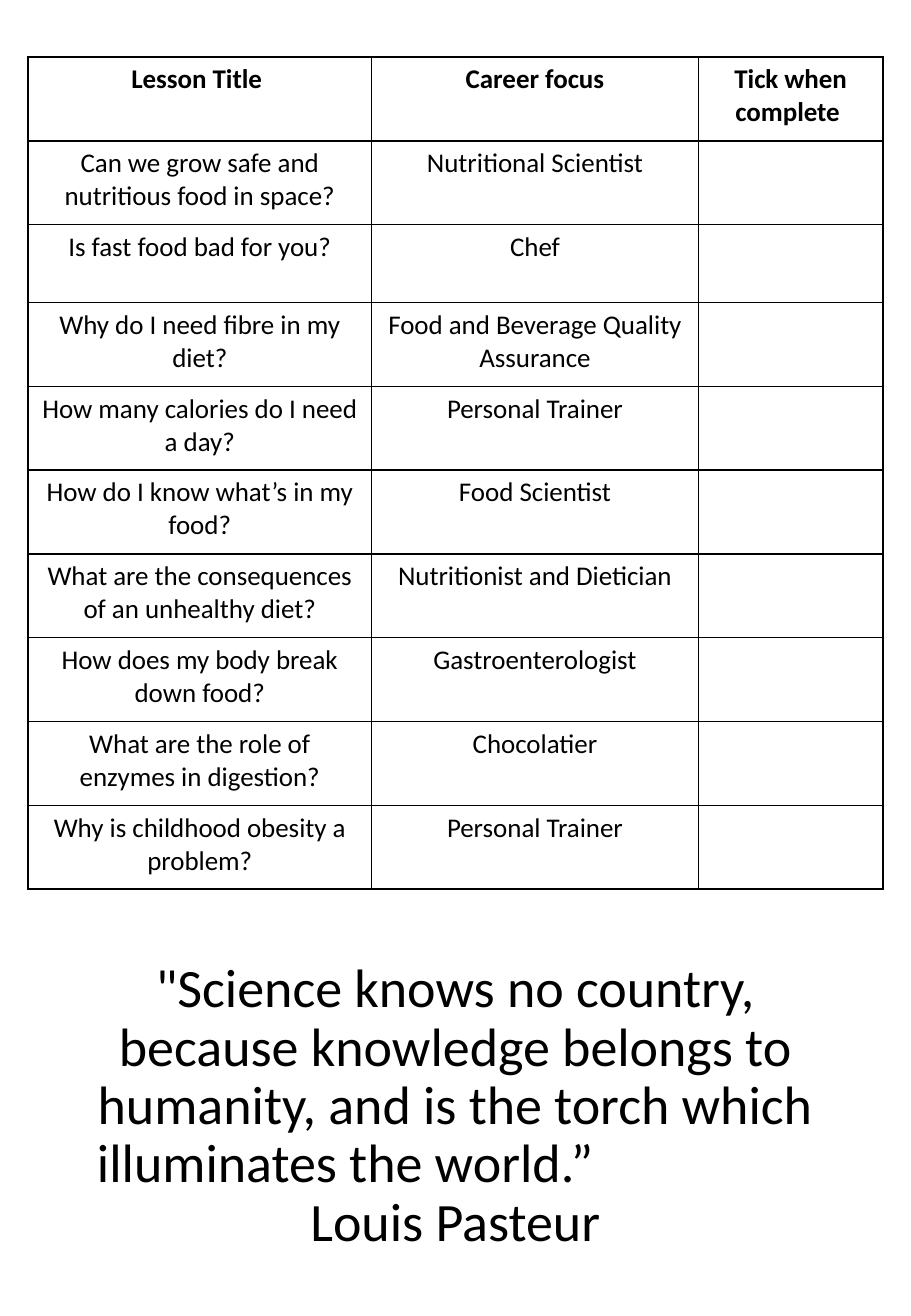
from lxml.etree import SubElement
from pptx import Presentation
from pptx.dml.color import RGBColor
from pptx.enum.text import MSO_ANCHOR, PP_ALIGN
from pptx.oxml.ns import qn
from pptx.util import Inches, Pt

COLOURS = {"ink": "000000", "paper": "FFFFFF"}
FONT = "Calibri"
HEADINGS = ("Lesson Title ", "Career focus", "Tick when complete ")
LESSONS = [
    ("Can we grow safe and nutritious food in space?", "Nutritional Scientist"),
    ("Is fast food bad for you?", "Chef"),
    ("Why do I need fibre in my diet?", "Food and Beverage Quality Assurance"),
    ("How many calories do I need a day?", "Personal Trainer"),
    ("How do I know what’s in my food?", "Food Scientist"),
    ("What are the consequences of an unhealthy diet?", "Nutritionist and Dietician"),
    ("How does my body break down food?", "Gastroenterologist"),
    ("What are the role of enzymes in digestion?", "Chocolatier"),
    ("Why is childhood obesity a problem?", "Personal Trainer"),
]
QUOTE = [
    ('"Science knows no country, because knowledge belongs to humanity, '
     "and is the torch which", PP_ALIGN.CENTER, 0),
    ("illuminates the world.”", PP_ALIGN.LEFT, 0.14),
    ("Louis Pasteur", PP_ALIGN.CENTER, 0),
]
COLUMN_WIDTHS = (2.83, 2.69, 1.52)
ROW_HEIGHT = 0.69
SHORT_ROW, SHORT_HEIGHT = 2, 0.64


def write(para, text, size=16, bold=False, align=PP_ALIGN.CENTER, spacing=None, indent=0):
    para.alignment = align
    if spacing:
        para.line_spacing = spacing
    if indent:
        para._p.get_or_add_pPr().set("marL", str(Inches(indent)))
    target = para
    if text:
        target = para.add_run()
        target.text = text
    target.font.name = FONT
    target.font.size = Pt(size)
    target.font.bold = bold
    target.font.color.rgb = RGBColor.from_string(COLOURS["ink"])


def style_cell(cell):
    properties = cell._tc.get_or_add_tcPr()
    for side in ("a:lnL", "a:lnR", "a:lnT", "a:lnB"):
        line = SubElement(properties, qn(side), w=str(Pt(1)))
        fill = SubElement(line, qn("a:solidFill"))
        SubElement(fill, qn("a:srgbClr"), val=COLOURS["ink"])
    cell.fill.solid()
    cell.fill.fore_color.rgb = RGBColor.from_string(COLOURS["paper"])


def add_lessons(page):
    rows = [HEADINGS] + [(*lesson, "") for lesson in LESSONS]
    heights = [SHORT_HEIGHT if i == SHORT_ROW else ROW_HEIGHT for i in range(len(rows))]
    table = page.shapes.add_table(
        len(rows), len(HEADINGS), Inches(0.23), Inches(0.47),
        Inches(sum(COLUMN_WIDTHS)), Inches(sum(heights))).table
    table.first_row = False
    table.horz_banding = False
    for column, width in zip(table.columns, COLUMN_WIDTHS):
        column.width = Inches(width)
    for row, height in zip(table.rows, heights):
        row.height = Inches(height)
    for r, texts in enumerate(rows):
        for c, text in enumerate(texts):
            cell = table.cell(r, c)
            style_cell(cell)
            write(cell.text_frame.paragraphs[0], text, bold=r == 0)


def add_quote(page):
    box = page.shapes.add_textbox(Inches(0.56), Inches(9.47), Inches(6.38), Inches(0.89))
    frame = box.text_frame
    frame.word_wrap = True
    frame.vertical_anchor = MSO_ANCHOR.BOTTOM
    for i, (text, align, indent) in enumerate(QUOTE):
        para = frame.add_paragraph() if i else frame.paragraphs[0]
        write(para, text, size=32, align=align, spacing=0.9, indent=indent)


def main():
    deck = Presentation()
    deck.slide_width = Inches(7.5)
    deck.slide_height = Inches(10.83)
    page = deck.slides.add_slide(deck.slide_layouts[6])
    add_lessons(page)
    add_quote(page)
    deck.save("out.pptx")


if __name__ == "__main__":
    main()
